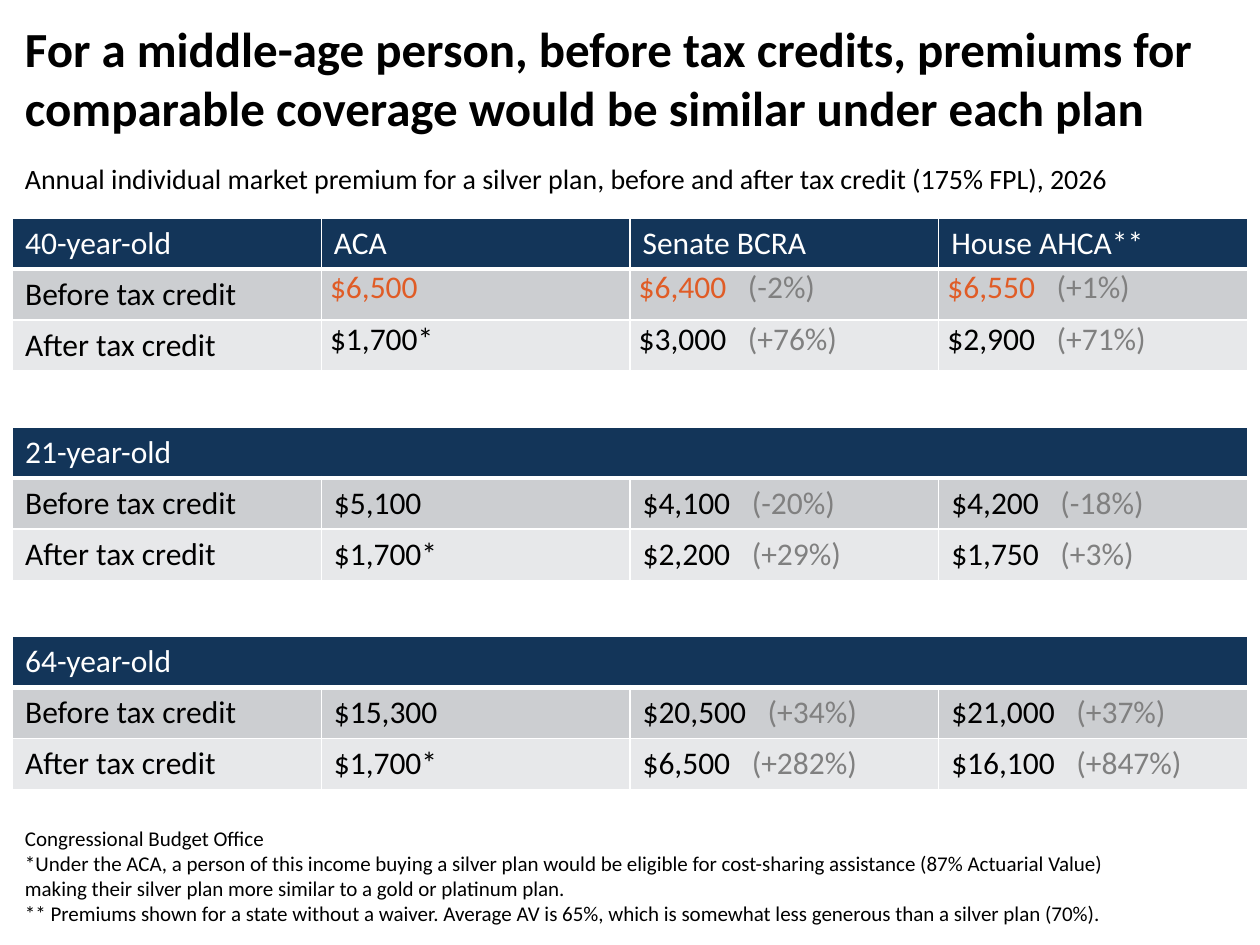
from dataclasses import dataclass

import pptx
import pptx.dml.color
import pptx.enum.text
import pptx.oxml
import pptx.oxml.ns
import pptx.util

Pt = pptx.util.Pt
ANCHOR = pptx.enum.text.MSO_ANCHOR

FONT = "Calibri"
BLACK, WHITE, GREY, ORANGE = "000000", "FFFFFF", "808080", "E05C26"
NAVY, DARK_BAND, LIGHT_BAND = "133559", "CCCED1", "E7E8EA"
LEFT, WIDTH = 7.2, 705.6
FIRST_TOP, TABLE_STEP, ROW_HEIGHT = 124.5, 119.5, 29.2
WIDE_GAP = 8.2  # extra points on the space between premium and change


@dataclass
class Premium:
    amount: str
    change: str = ""


@dataclass
class AgeGroup:
    headings: list[str]
    before: list[Premium]
    after: list[Premium]
    highlight: bool = False  # orange premiums, tight cell margins


GROUPS = [
    AgeGroup(
        ["40-year-old", "ACA", "Senate BCRA", "House AHCA**"],
        [Premium("$6,500"), Premium("$6,400", "(-2%)"), Premium("$6,550", "(+1%)")],
        [Premium("$1,700*"), Premium("$3,000", "(+76%)"), Premium("$2,900", "(+71%)")],
        highlight=True,
    ),
    AgeGroup(
        ["21-year-old"],
        [Premium("$5,100"), Premium("$4,100", "(-20%)"), Premium("$4,200", "(-18%)")],
        [Premium("$1,700*"), Premium("$2,200", "(+29%)"), Premium("$1,750", "(+3%)")],
    ),
    AgeGroup(
        ["64-year-old"],
        [Premium("$15,300"), Premium("$20,500", "(+34%)"), Premium("$21,000", "(+37%)")],
        [Premium("$1,700*"), Premium("$6,500", "(+282%)"), Premium("$16,100", "(+847%)")],
    ),
]


def rgb(value: str) -> pptx.dml.color.RGBColor:
    return pptx.dml.color.RGBColor.from_string(value)


def set_font(font, size: float, color: str, bold: bool = False) -> None:
    font.name, font.size, font.bold = FONT, Pt(size), bold
    font.color.rgb = rgb(color)


def add_text(s, top: float, width: float, height: float, lines: list[str],
             size: float, bold: bool = False, anchor=ANCHOR.TOP) -> None:
    tf = s.shapes.add_textbox(Pt(LEFT), Pt(top), Pt(width), Pt(height)).text_frame
    tf.word_wrap = True
    tf.vertical_anchor = anchor
    for i, line in enumerate(lines):
        p = tf.paragraphs[0] if i == 0 else tf.add_paragraph()
        p.text = line
        set_font(p.font, size, BLACK, bold)


def style_cell(cell, fill: str, bottom: float = 1) -> None:
    tcPr = cell._tc.get_or_add_tcPr()
    for side, width in (("L", 1), ("R", 1), ("T", 1), ("B", bottom)):
        tcPr.append(pptx.oxml.parse_xml(
            f'<a:ln{side} {pptx.oxml.ns.nsdecls("a")} w="{Pt(width)}">'
            f'<a:solidFill><a:srgbClr val="{WHITE}"/></a:solidFill></a:ln{side}>'))
    cell.fill.solid()
    cell.fill.fore_color.rgb = rgb(fill)


def fill_label(cell, text: str, color: str) -> None:
    p = cell.text_frame.paragraphs[0]
    p.text = text
    set_font(p.font, 18, color)


def fill_premium(cell, premium: Premium, color: str, tight: bool) -> None:
    if tight:
        cell.margin_left = cell.margin_right = Pt(5)
        cell.margin_top = cell.margin_bottom = Pt(0)
    fill_label(cell, premium.amount, color)
    if premium.change:
        p = cell.text_frame.paragraphs[0]
        gap = p.add_run()
        gap.text = " "
        gap._r.get_or_add_rPr().set("spc", str(round(WIDE_GAP * 100)))
        r = p.add_run()
        r.text = premium.change
        r.font.color.rgb = rgb(GREY)


def add_group(s, group: AgeGroup, top: float) -> None:
    table = s.shapes.add_table(3, 4, Pt(LEFT), Pt(top), Pt(WIDTH), Pt(3 * ROW_HEIGHT)).table
    table.first_row = table.horz_banding = False
    for row in table.rows:
        row.height = Pt(ROW_HEIGHT)

    # Header row, one merged cell when there is a single heading
    for col in range(4):
        style_cell(table.cell(0, col), NAVY, bottom=3)
    for col, heading in enumerate(group.headings):
        fill_label(table.cell(0, col), heading, WHITE)
    if len(group.headings) == 1:
        table.cell(0, 0).merge(table.cell(0, 3))

    # Premium rows
    rows = [
        ("Before tax credit", group.before, DARK_BAND, ORANGE if group.highlight else BLACK),
        ("After tax credit", group.after, LIGHT_BAND, BLACK),
    ]
    for i, (label, premiums, band, color) in enumerate(rows, 1):
        for col in range(4):
            style_cell(table.cell(i, col), band)
        fill_label(table.cell(i, 0), label, BLACK)
        for col, premium in enumerate(premiums, 1):
            fill_premium(table.cell(i, col), premium, color, group.highlight)


def main() -> None:
    prs = pptx.Presentation()
    prs.slide_width, prs.slide_height = Pt(720), Pt(540)
    s = prs.slides.add_slide(prs.slide_layouts[6])

    # Title and subtitle
    add_text(s, 7.2, WIDTH, 72, [
        "For a middle-age person, before tax credits, premiums for "
        "comparable coverage would be similar under each plan"], 28, bold=True)
    add_text(s, 88.5, WIDTH, 26.6, [
        "Annual individual market premium for a silver plan, "
        "before and after tax credit (175% FPL), 2026"], 16)

    # One table per age group
    for i, group in enumerate(GROUPS):
        add_group(s, group, FIRST_TOP + i * TABLE_STEP)

    # Source and notes
    add_text(s, 489.6, 655.2, 43.2, [
        "Congressional Budget Office",
        "*Under the ACA, a person of this income buying a silver plan would be eligible "
        "for cost-sharing assistance (87% Actuarial Value) making their silver plan "
        "more similar to a gold or platinum plan.",
        "** Premiums shown for a state without a waiver. Average AV is 65%, "
        "which is somewhat less generous than a silver plan (70%).",
    ], 12, anchor=ANCHOR.BOTTOM)

    prs.save("out.pptx")


if __name__ == "__main__":
    main()
